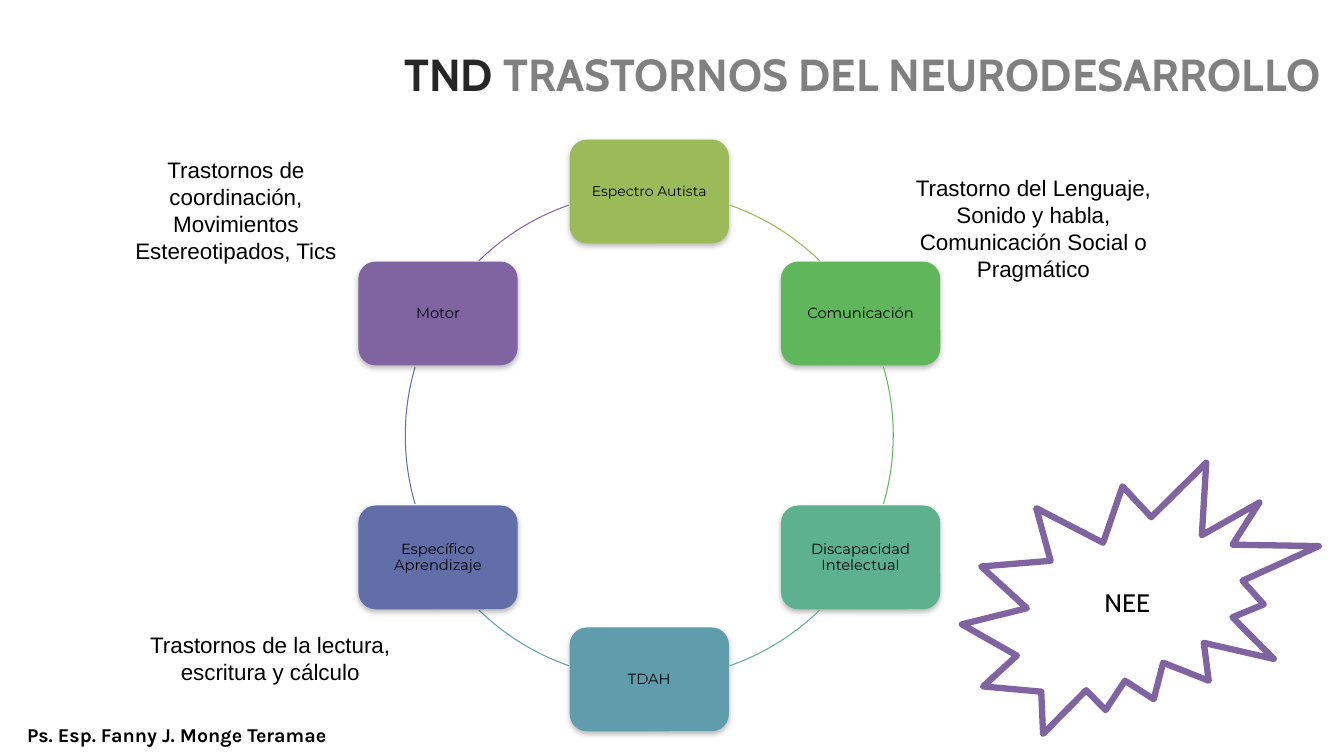
from math import cos, radians, sin
from lxml.etree import SubElement
from pptx import Presentation
from pptx.dml.color import RGBColor
from pptx.enum.shapes import MSO_SHAPE
from pptx.enum.text import MSO_ANCHOR, PP_ALIGN
from pptx.oxml.ns import qn
from pptx.util import Pt

PX = 9144  # 100 px to the inch

BLACK = RGBColor(0x00, 0x00, 0x00)
WHITE = RGBColor(0xFF, 0xFF, 0xFF)
DARK = RGBColor(0x26, 0x26, 0x26)
GRAY = RGBColor(0x80, 0x80, 0x80)
OLIVE = RGBColor(0x9B, 0xBB, 0x59)
GREEN = RGBColor(0x5F, 0xB6, 0x5B)
MINT = RGBColor(0x5D, 0xB1, 0x8E)
TEAL = RGBColor(0x5F, 0x9D, 0xAC)
BLUE = RGBColor(0x62, 0x6E, 0xA7)
PURPLE = RGBColor(0x80, 0x64, 0xA2)


def write(shape, text, font="Arial", size=16, color=BLACK, bold=False,
          align=PP_ALIGN.CENTER, anchor=MSO_ANCHOR.MIDDLE, wrap=True,
          spacing=1.0, after=0):
    """Add a run to the first paragraph of a shape and format both."""
    frame = shape.text_frame
    frame.word_wrap = wrap
    frame.vertical_anchor = anchor
    para = frame.paragraphs[0]
    para.alignment = align
    para.line_spacing = spacing
    para.space_after = Pt(after)
    run = para.add_run()
    run.text = text
    run.font.name = font
    run.font.size = Pt(size)
    run.font.bold = bold
    run.font.color.rgb = color


def place(kind, left, top, width, height):
    """Add a preset shape, or a text box when kind is None."""
    box = [round(n * PX) for n in (left, top, width, height)]
    if kind is None:
        return shapes.add_textbox(*box)
    shape = shapes.add_shape(kind, *box)
    shape.shadow.inherit = False
    return shape


deck = Presentation()
deck.slide_width = 1333 * PX
deck.slide_height = 750 * PX
slide = deck.slides.add_slide(deck.slide_layouts[6])
shapes = slide.shapes

# Cycle: a node every 60 degrees, clockwise from the top, each followed by its arc
MID_X, MID_Y, RADIUS = 644, 432, 242
NODE_W, NODE_H = 158, 103
nodes = [
    ("Espectro Autista", 10, OLIVE, 289.3, 314.3),
    ("Comunicación", 10.5, GREEN, 343.7, 16.3),
    ("Discapacidad Intelectual", 10.5, MINT, 45.7, 70.7),
    ("TDAH", 10.5, TEAL, 109.3, 134.3),
    ("Específico Aprendizaje", 10.5, BLUE, 163.7, 196.3),
    ("Motor", 10.5, PURPLE, 225.7, 250.7),
]
for i, (name, size, color, start, end) in enumerate(nodes):
    turn = radians(60 * i - 90)
    node = place(MSO_SHAPE.ROUNDED_RECTANGLE,
                 MID_X + RADIUS * cos(turn) - NODE_W / 2,
                 MID_Y + RADIUS * sin(turn) - NODE_H / 2, NODE_W, NODE_H)
    node.fill.solid()
    node.fill.fore_color.rgb = color
    node.line.fill.background()
    effects = node._element.spPr.find(qn("a:effectLst"))
    shade = SubElement(effects, qn("a:outerShdw"), blurRad=str(Pt(4)),
                       dist=str(Pt(2)), dir="5400000", rotWithShape="0")
    black = SubElement(shade, qn("a:srgbClr"), val="000000")
    SubElement(black, qn("a:alpha"), val="28000")
    write(node, name, font="Montserrat", size=size, spacing=0.9,
          after=0.35 * size)

    arc = place(MSO_SHAPE.ARC, MID_X - RADIUS, MID_Y - RADIUS,
                2 * RADIUS, 2 * RADIUS)
    arc.adjustments[0] = start * 0.6  # 60000 units a degree, over 100000
    arc.adjustments[1] = end * 0.6
    arc.fill.background()
    arc.line.color.rgb = color
    arc.line.width = Pt(0.75)

captions = [
    ("Trastornos de coordinación, Movimientos Estereotipados, Tics", 95, 150, 91),
    ("Trastornos de la lectura, escritura y cálculo", 129, 621, 64),
    ("Trastorno del Lenguaje, Sonido y habla, Comunicación Social o Pragmático",
     886, 168, 118),
]
for text, left, top, height in captions:
    write(place(None, left, top, 278, height), text, anchor=MSO_ANCHOR.TOP)

write(place(None, 17, 712, 354, 34), "Ps. Esp. Fanny J. Monge Teramae",
      font="Karla", size=14, bold=True, align=PP_ALIGN.LEFT,
      anchor=MSO_ANCHOR.TOP, wrap=False)

title = place(None, 321, 43, 999, 67)
for text, color in (("TND ", DARK), ("TRASTORNOS DEL NEURODESARROLLO", GRAY)):
    write(title, text, font="Cabin", size=32, color=color, bold=True,
          align=PP_ALIGN.RIGHT, spacing=0.9)

burst = place(MSO_SHAPE.EXPLOSION2, 954, 459, 354, 269)
burst.fill.solid()
burst.fill.fore_color.rgb = WHITE
burst.line.color.rgb = PURPLE
burst.line.width = Pt(4.5)
write(burst, "NEE", font="Cabin", size=18)

deck.save("out.pptx")
